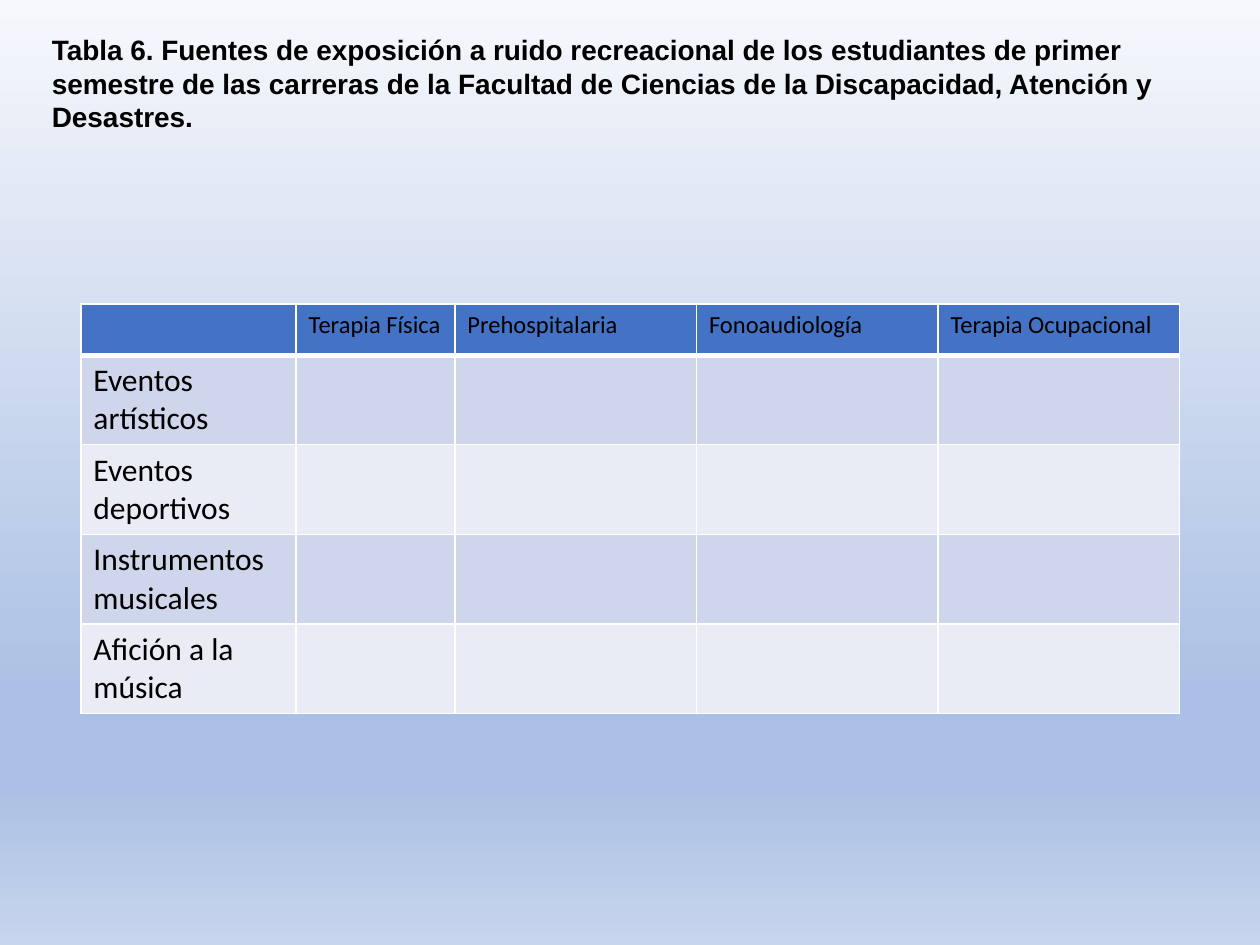
from dataclasses import dataclass

from lxml import etree
from pptx import Presentation
from pptx.dml.color import RGBColor
from pptx.enum.text import MSO_ANCHOR, PP_ALIGN
from pptx.oxml.ns import qn
from pptx.util import Cm, Pt

TOP = MSO_ANCHOR.TOP
LEFT = PP_ALIGN.LEFT

BLACK = RGBColor(0x00, 0x00, 0x00)
WHITE = RGBColor(0xFF, 0xFF, 0xFF)
HEADER_BLUE = RGBColor(0x44, 0x72, 0xC4)
BAND_DARK = RGBColor(0xCF, 0xD5, 0xEA)
BAND_LIGHT = RGBColor(0xE9, 0xEB, 0xF5)
SKY_PALE = RGBColor(0xF6, 0xF8, 0xFC)
SKY_BLUE = RGBColor(0xAB, 0xC0, 0xE4)
SKY_SOFT = RGBColor(0xC7, 0xD5, 0xED)

SKY_STOPS = ((0, SKY_PALE), (74, SKY_BLUE), (83, SKY_BLUE), (100, SKY_SOFT))

TITLE = (
    "Tabla 6. Fuentes de exposición a ruido recreacional de los estudiantes "
    "de primer semestre de las carreras de la Facultad de Ciencias de la "
    "Discapacidad, Atención y Desastres."
)
CAREERS = ("Terapia Física", "Prehospitalaria", "Fonoaudiología", "Terapia Ocupacional")
NOISE_SOURCES = (
    "Eventos artísticos",
    "Eventos deportivos",
    "Instrumentos musicales",
    "Afición a la música",
)
COLUMN_WIDTHS = (4.34, 3.2, 4.87, 4.87, 4.87)
ROW_HEIGHT = 1.03


@dataclass
class TableRow:
    texts: tuple
    size: int
    fill: RGBColor
    top_border: int = 1
    bottom_border: int = 1


def paint_background(slide, stops) -> None:
    fill = slide.background.fill
    fill.gradient()
    fill.gradient_angle = 270
    stop_list = fill.gradient_stops[0]._gs.getparent()
    for old_stop in list(stop_list):
        stop_list.remove(old_stop)
    for percent, color in stops:
        stop = etree.SubElement(stop_list, qn("a:gs"), pos=str(percent * 1000))
        etree.SubElement(stop, qn("a:srgbClr"), val=str(color))


def format_text(paragraph, font_name: str, size: int, bold: bool) -> None:
    font = paragraph.font
    font.name, font.size, font.bold = font_name, Pt(size), bold
    font.color.rgb = BLACK


def add_border(cell, side: str, width: int) -> None:
    properties = cell._tc.get_or_add_tcPr()
    line = etree.SubElement(properties, qn(f"a:ln{side}"), w=str(Pt(width)))
    fill = etree.SubElement(line, qn("a:solidFill"))
    etree.SubElement(fill, qn("a:srgbClr"), val=str(WHITE))


def fill_row(cells, row: TableRow) -> None:
    borders = {"L": 1, "R": 1, "T": row.top_border, "B": row.bottom_border}
    for cell, text in zip(cells, row.texts):
        for side, width in borders.items():
            add_border(cell, side, width)
        cell.fill.solid()
        cell.fill.fore_color.rgb = row.fill
        if text:
            cell.text = text
            format_text(cell.text_frame.paragraphs[0], "Calibri", row.size, False)


def add_title(slide) -> None:
    title = slide.shapes.title
    title.left, title.top, title.width, title.height = Cm(0.79), Cm(0.53), Cm(23.8), Cm(3.68)
    frame = title.text_frame
    frame.text = TITLE
    frame.word_wrap = True
    frame.vertical_anchor = TOP
    paragraph = frame.paragraphs[0]
    paragraph.alignment = LEFT
    format_text(paragraph, "Arial", 16, True)


def add_noise_table(slide) -> None:
    # Header, then one banded row per noise source
    rows = [TableRow(("", *CAREERS), 14, HEADER_BLUE, bottom_border=3)]
    for index, source in enumerate(NOISE_SOURCES):
        band = BAND_LIGHT if index % 2 else BAND_DARK
        texts = (source, *[""] * len(CAREERS))
        rows.append(TableRow(texts, 18, band, top_border=1 if index else 3))

    table = slide.shapes.add_table(
        len(rows), len(COLUMN_WIDTHS), Cm(1.63), Cm(6.13),
        Cm(sum(COLUMN_WIDTHS)), Cm(ROW_HEIGHT * len(rows)),
    ).table
    for column, width in zip(table.columns, COLUMN_WIDTHS):
        column.width = Cm(width)
    for table_row, row in zip(table.rows, rows):
        table_row.height = Cm(ROW_HEIGHT)
        fill_row(table_row.cells, row)


def main() -> None:
    deck = Presentation()
    deck.slide_width, deck.slide_height = Cm(25.4), Cm(19.05)
    slide = deck.slides.add_slide(deck.slide_layouts[5])
    paint_background(slide, SKY_STOPS)
    add_noise_table(slide)
    add_title(slide)
    deck.save("out.pptx")


if __name__ == "__main__":
    main()
